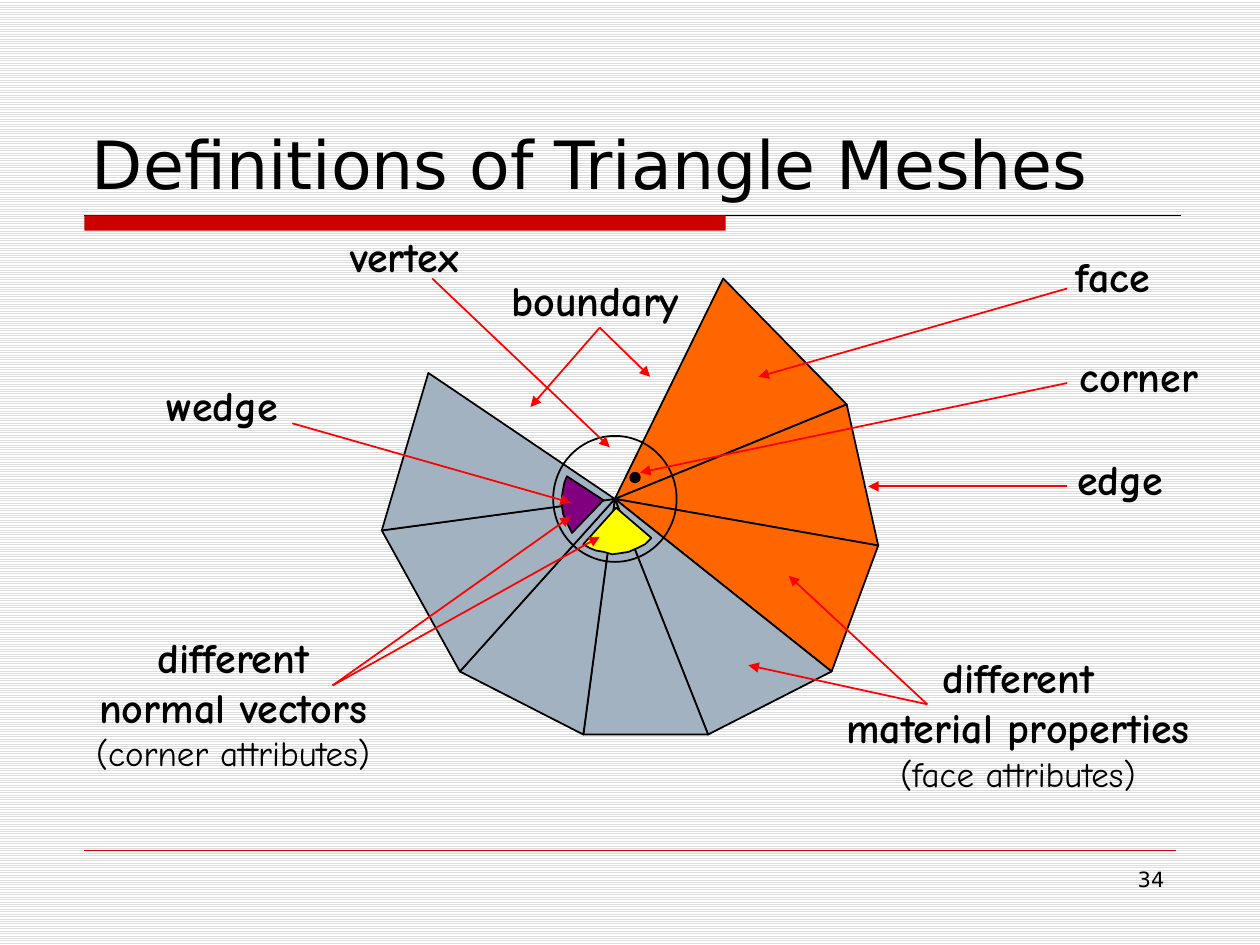
from itertools import pairwise

from lxml import etree
from pptx import Presentation
from pptx.dml.color import RGBColor
from pptx.enum.dml import MSO_PATTERN
from pptx.enum.shapes import MSO_CONNECTOR, MSO_SHAPE
from pptx.enum.text import MSO_ANCHOR, PP_ALIGN
from pptx.oxml.ns import qn
from pptx.util import Inches, Pt

LABEL_FONT, BASE_FONT = "Comic Neue", "DejaVu Sans"
BLACK, RED, ARROW = "000000", "CC0000", "FF0000"
ORANGE, GREY, PURPLE, YELLOW = "FF6600", "A3B2C1", "800080", "FFFF00"


def rgb(color):
    return RGBColor.from_string(color)


def style(sp, fill=None, line=None, width=1):
    sp.shadow.inherit = False
    if fill:
        sp.fill.solid()
        sp.fill.fore_color.rgb = rgb(fill)
    else:
        sp.fill.background()
    if line:
        sp.line.color.rgb = rgb(line)
        sp.line.width = Pt(width)
    else:
        sp.line.fill.background()


def write(tf, text, size=24, font=LABEL_FONT, bold=False, color=BLACK,
          align=PP_ALIGN.LEFT, anchor=MSO_ANCHOR.MIDDLE, wrap=False, small=None):
    """Fill a text frame; small is a last, lighter line."""
    tf.word_wrap = wrap
    tf.vertical_anchor = anchor
    lines = [(t, size, bold) for t in text.split("\n")]
    if small:
        lines.append((small, 20, False))
    for i, (words, pts, heavy) in enumerate(lines):
        p = tf.add_paragraph() if i else tf.paragraphs[0]
        p.alignment = align
        r = p.add_run()
        r.text = words
        r.font.size, r.font.bold, r.font.name = Pt(pts), heavy, font
        r.font.color.rgb = rgb(color)


def add_text(s, box, text, **fmt):
    tb = s.shapes.add_textbox(*map(Inches, box))
    write(tb.text_frame, text, **fmt)


def add_line(s, start, end, color, width, arrow=False):
    c = s.shapes.add_connector(MSO_CONNECTOR.STRAIGHT, *map(Inches, (*start, *end)))
    c.line.color.rgb = rgb(color)
    c.line.width = Pt(width)
    if arrow:
        etree.SubElement(c.line._get_or_add_ln(), qn("a:tailEnd"), type="triangle")
    etree.SubElement(c._element.spPr, qn("a:effectLst"))


def add_polygon(s, points, fill):
    first, *rest = [(Inches(x), Inches(y)) for x, y in points]
    fb = s.shapes.build_freeform(*first)
    fb.add_line_segments(rest, close=True)
    style(fb.convert_to_shape(), fill, BLACK)


def add_ellipse(s, box, **fmt):
    style(s.shapes.add_shape(MSO_SHAPE.OVAL, *map(Inches, box)), **fmt)


def add_frame(s, box, title, number):
    """Background, title, rules and page number within the content box."""
    x, y, w, h = box
    fill = s.background.fill
    fill.patterned()
    fill.pattern = MSO_PATTERN.LIGHT_HORIZONTAL
    fill.fore_color.rgb, fill.back_color.rgb = rgb("DDDDDD"), rgb("FFFFFF")

    add_line(s, (x, y), (x + w, y), BLACK, 0.75)
    bar = s.shapes.add_shape(MSO_SHAPE.RECTANGLE, *map(Inches, (x, y, 5.09, 0.12)))
    style(bar, RED)
    add_line(s, (x, y + h), (x + w - 0.04, y + h), RED, 0.25)

    ph = s.shapes.title
    ph.left, ph.top, ph.width, ph.height = map(Inches, (x - 0.04, y - 1.38, 8.75, 1.33))
    write(ph.text_frame, title, size=38, font=BASE_FONT,
          anchor=MSO_ANCHOR.BOTTOM, wrap=True)
    add_text(s, (x + w - 2.2, y + h + 0.08, 2.17, 0.52), number, size=12,
             font=BASE_FONT, align=PP_ALIGN.RIGHT, anchor=MSO_ANCHOR.TOP, wrap=True)


def add_mesh(s, center):
    """Triangle fan around a vertex, with its ring and wedges."""
    cx, cy = center

    def around(offsets):
        return [(cx + dx, cy + dy) for dx, dy in offsets]

    rim = around([(0.86, -1.75), (1.84, -0.75), (2.09, 0.37), (1.72, 1.37),
                  (0.74, 1.87), (-0.25, 1.87), (-1.23, 1.37), (-1.85, 0.25),
                  (-1.48, -1)])
    for i, (a, b) in enumerate(pairwise(rim)):
        add_polygon(s, [center, a, b], ORANGE if i < 3 else GREY)

    add_ellipse(s, (cx - 0.49, cy - 0.5, 0.98, 1), line=BLACK)
    add_polygon(s, around([(-0.09, 0.01), (-0.34, 0.27), (-0.38, 0.19), (-0.41, 0.12),
                           (-0.42, 0.06), (-0.42, -0.02), (-0.41, -0.08),
                           (-0.4, -0.13), (-0.38, -0.18)]), PURPLE)
    add_polygon(s, around([(0.01, 0.07), (0.29, 0.31), (0.24, 0.36), (0.18, 0.39),
                           (0.11, 0.42), (0.05, 0.43), (-0.02, 0.44), (-0.09, 0.42),
                           (-0.15, 0.41), (-0.2, 0.39), (-0.25, 0.36)]), YELLOW)


def add_callout(s, box, text, start, *targets, **fmt):
    """Label with an arrow from start to each target."""
    add_text(s, box, text, bold=True, **fmt)
    for target in targets:
        add_line(s, start, target, ARROW, 1, arrow=True)


def main():
    prs = Presentation()
    prs.slide_width, prs.slide_height = Inches(10), Inches(7.5)
    s = prs.slides.add_slide(prs.slide_layouts[5])
    add_frame(s, (0.67, 1.71, 8.7, 5.04), "Definitions of Triangle Meshes", "34")
    add_mesh(s, (4.88, 3.96))

    center = PP_ALIGN.CENTER
    add_callout(s, (8.44, 1.94, 0.91, 0.5), "face", (8.47, 2.29), (6.02, 2.99))
    add_callout(s, (8.45, 3.55, 0.95, 0.5), "edge", (8.47, 3.86), (6.89, 3.86))
    add_callout(s, (6.43, 5.12, 3.3, 1.23), "different\nmaterial properties",
                (7.36, 5.59), (6.26, 4.57), (5.94, 5.28),
                small="(face attributes)", align=center)
    add_callout(s, (0.04, 4.96, 3.62, 1.23), "different\nnormal vectors",
                (2.64, 5.44), (4.53, 4.1), (4.76, 4.26),
                small="(corner attributes)", align=center, wrap=True)
    add_callout(s, (2.68, 1.78, 1.25, 0.5), "vertex", (3.43, 2.21), (4.84, 3.55))
    add_callout(s, (3.9, 2.13, 1.65, 0.5), "boundary",
                (4.76, 2.6), (5.16, 2.99), (4.21, 3.23), align=center)
    add_callout(s, (1.22, 2.96, 1.17, 0.5), "wedge", (2.32, 3.36), (4.53, 3.99))
    add_callout(s, (8.47, 2.73, 1.23, 0.5), "corner", (8.47, 3.04), (5.08, 3.75))
    add_ellipse(s, (5, 3.75, 0.08, 0.08), fill=BLACK, line=BLACK, width=0.75)
    prs.save("out.pptx")


if __name__ == "__main__":
    main()
